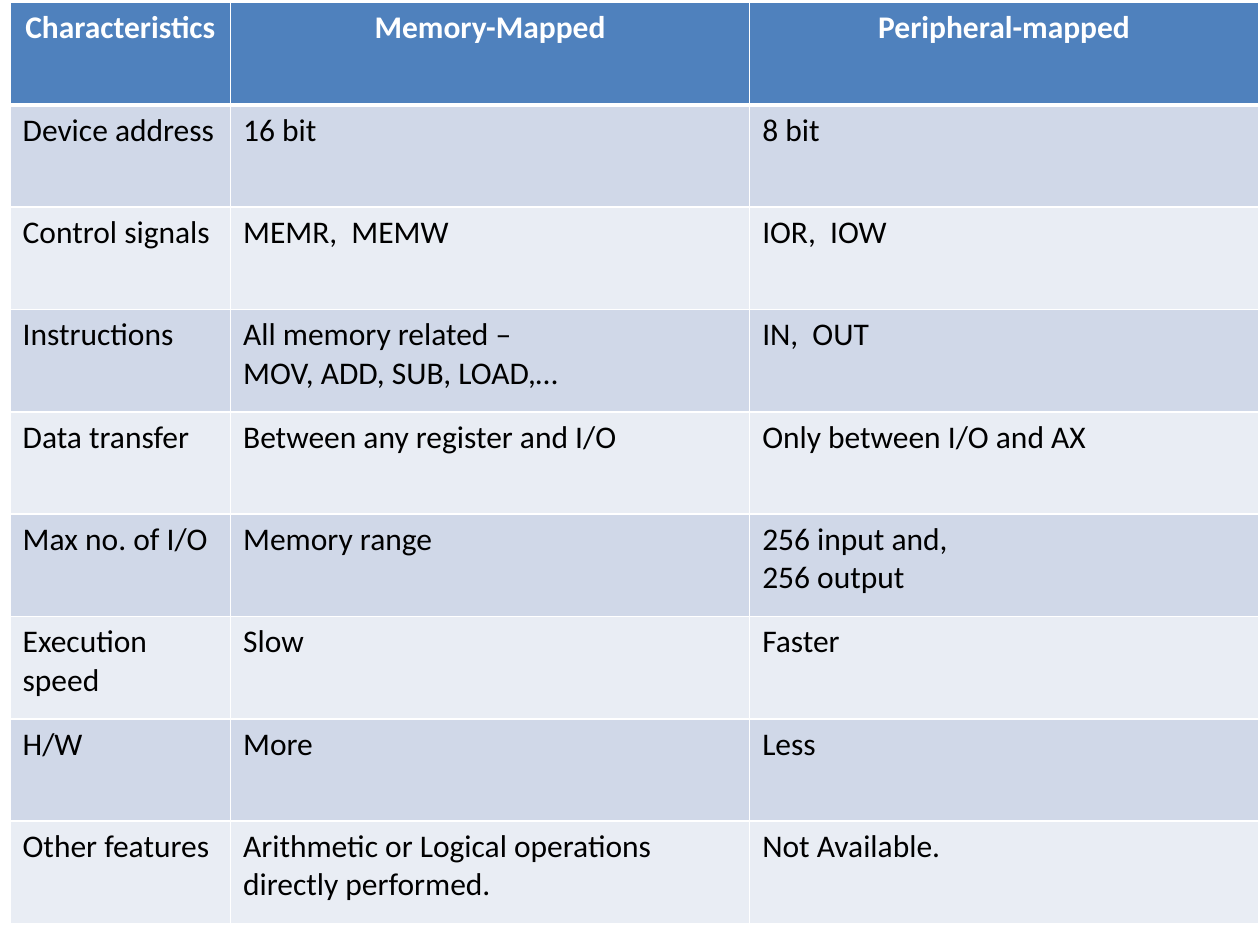
"""Build a slide with a table comparing memory-mapped and peripheral-mapped I/O."""
from lxml.etree import SubElement
from pptx import Presentation
from pptx.dml.color import RGBColor
from pptx.enum.text import PP_ALIGN as Align
from pptx.oxml.ns import qn
from pptx.util import Inches, Pt

COLORS = {
    "header": "4F81BD",
    "odd": "D0D8E8",
    "even": "E9EDF4",
    "border": "FFFFFF",
    "header_text": "FFFFFF",
    "text": "000000",
}
FONT = "Calibri"
ROWS = [
    ("Characteristics", "Memory-Mapped", "Peripheral-mapped"),
    ("Device address", "16 bit", "8 bit"),
    ("Control signals", "MEMR,  MEMW", "IOR,  IOW"),
    ("Instructions", "All memory related –\nMOV, ADD, SUB, LOAD,…", "IN,  OUT"),
    ("Data transfer", "Between any register and I/O", "Only between I/O and AX"),
    ("Max no. of I/O", "Memory range", "256 input and,\n256 output"),
    ("Execution speed", "Slow", "Faster"),
    ("H/W", "More", "Less"),
    ("Other features", "Arithmetic or Logical operations directly performed.", "Not Available."),
]
COLUMN_WIDTHS = (1.75, 4.12, 4.04)
LEFT, TOP, HEIGHT = 0.08, 0.02, 7.31


def write_text(cell, text, size=18, color="text", bold=False, align=Align.LEFT):
    cell.text_frame.text = text
    for para in cell.text_frame.paragraphs:
        para.alignment = align
        for span in para.runs:
            span.font.name = FONT
            span.font.size = Pt(size)
            span.font.bold = bold
            span.font.color.rgb = RGBColor.from_string(COLORS[color])


def draw_borders(cell, widths):
    properties = cell._tc.get_or_add_tcPr()
    for side, width in zip("LRTB", widths):
        line = SubElement(properties, qn(f"a:ln{side}"), w=str(Pt(width)))
        fill = SubElement(line, qn("a:solidFill"))
        SubElement(fill, qn("a:srgbClr"), val=COLORS["border"])


def fill_cell(cell, color):
    cell.fill.solid()
    cell.fill.fore_color.rgb = RGBColor.from_string(COLORS[color])


def main():
    deck = Presentation()
    deck.slide_width, deck.slide_height = Inches(10), Inches(7.5)
    page = deck.slides.add_slide(deck.slide_layouts[6])
    table = page.shapes.add_table(
        len(ROWS), len(COLUMN_WIDTHS), Inches(LEFT), Inches(TOP),
        Inches(sum(COLUMN_WIDTHS)), Inches(HEIGHT),
    ).table
    for column, width in zip(table.columns, COLUMN_WIDTHS):
        column.width = Inches(width)

    for row_index, texts in enumerate(ROWS):
        table.rows[row_index].height = Inches(HEIGHT / len(ROWS))
        is_header = row_index == 0
        band = "header" if is_header else "odd" if row_index % 2 else "even"
        style = {"color": "header_text", "bold": True, "align": Align.CENTER} if is_header else {}
        top_width = 3 if row_index == 1 else 1
        bottom_width = 3 if is_header else 1
        for column_index, text in enumerate(texts):
            cell = table.cell(row_index, column_index)
            write_text(cell, text, **style)
            draw_borders(cell, (1, 1, top_width, bottom_width))
            fill_cell(cell, band)

    deck.save("out.pptx")


if __name__ == "__main__":
    main()
